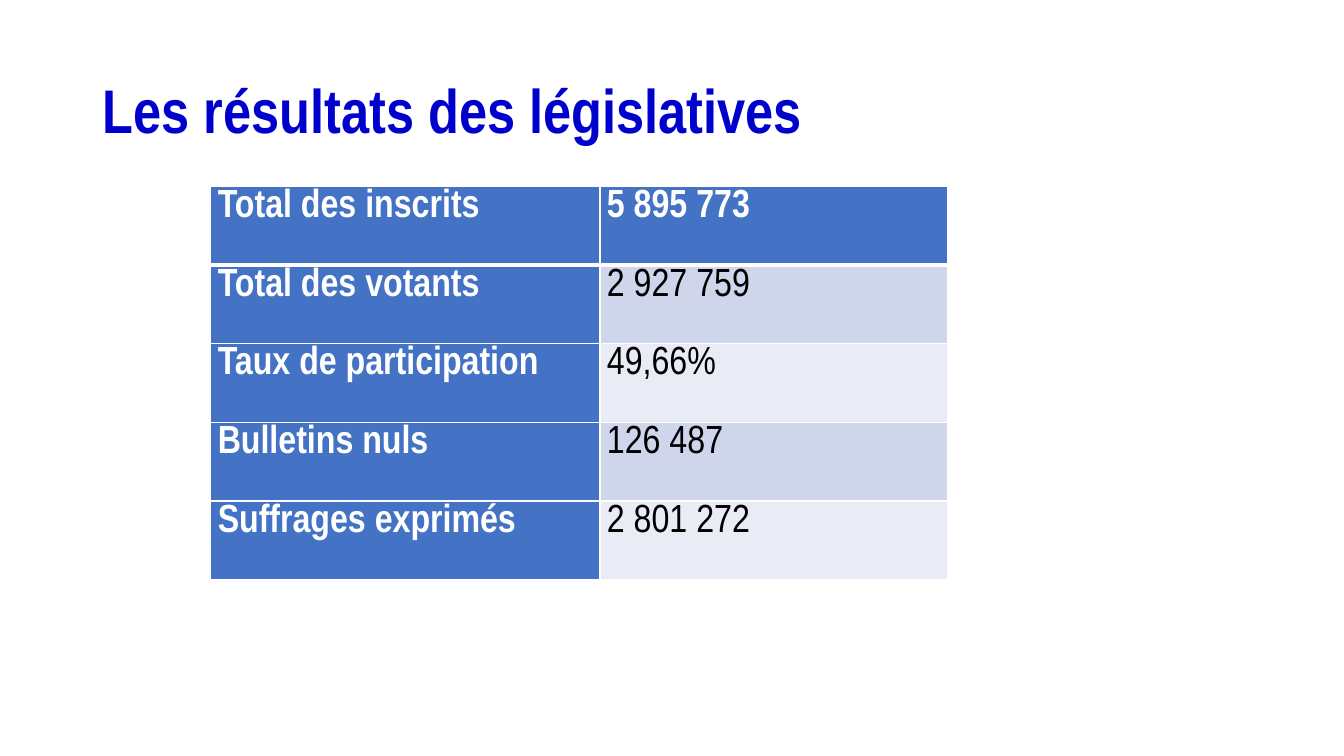
from typing import NamedTuple

from lxml.etree import SubElement
from pptx import Presentation
from pptx.dml.color import RGBColor
from pptx.enum.text import MSO_ANCHOR, MSO_AUTO_SIZE, PP_ALIGN
from pptx.oxml.ns import qn
from pptx.slide import Slide
from pptx.util import Emu, Pt

EMU_PER_PX = 9144
FONT = "Arial Narrow"
TITLE_BLUE = RGBColor(0x00, 0x00, 0xCC)
HEADER_BLUE = RGBColor(0x44, 0x72, 0xC4)
BAND_DARK = RGBColor(0xCF, 0xD5, 0xEA)
BAND_LIGHT = RGBColor(0xE9, 0xEB, 0xF5)
WHITE = RGBColor(0xFF, 0xFF, 0xFF)
BLACK = RGBColor(0x00, 0x00, 0x00)
COLUMN_WIDTHS = (386, 345)
ROW_HEIGHT = 78


class Result(NamedTuple):
    label: str
    value: str


RESULTS = (
    Result("Total des inscrits", "5 895 773"),
    Result("Total des votants", "2 927 759"),
    Result("Taux de participation", "49,66%"),
    Result("Bulletins nuls", "126 487"),
    Result("Suffrages exprimés", "2 801 272"),
)


def px(length: int) -> Emu:
    return Emu(length * EMU_PER_PX)


def add_run(paragraph, text: str, size: int, color: RGBColor, bold: bool) -> None:
    run = paragraph.add_run()
    run.text = text
    run.font.name = FONT
    run.font.size = Pt(size)
    run.font.bold = bold
    run.font.color.rgb = color


def add_border(cell, side: str, width: int) -> None:
    line = SubElement(cell._tc.get_or_add_tcPr(), qn(f"a:ln{side}"), w=str(Pt(width)))
    SubElement(SubElement(line, qn("a:solidFill")), qn("a:srgbClr"), val=str(WHITE))


def draw_title(slide: Slide, text: str) -> None:
    title = slide.shapes.title
    title.left, title.top, title.width, title.height = px(92), px(40), px(1150), px(145)
    frame = title.text_frame
    frame.word_wrap = True
    frame.auto_size = MSO_AUTO_SIZE.NONE
    frame.vertical_anchor = MSO_ANCHOR.MIDDLE
    paragraph = frame.paragraphs[0]
    paragraph.alignment = PP_ALIGN.LEFT
    paragraph.line_spacing = 0.9
    add_run(paragraph, text, 44, TITLE_BLUE, True)


def draw_cell(cell, text: str, row: int, column: int) -> None:
    # Borders come before the fill in the cell properties
    for side in "LRTB":
        under_header = (side == "B" and row == 0) or (side == "T" and row == 1)
        add_border(cell, side, 3 if under_header else 1)
    is_header = row == 0 or column == 0
    cell.fill.solid()
    cell.fill.fore_color.rgb = HEADER_BLUE if is_header else BAND_DARK if row % 2 else BAND_LIGHT

    cell.margin_left = cell.margin_right = px(7)
    cell.margin_top = cell.margin_bottom = 0
    paragraph = cell.text_frame.paragraphs[0]
    paragraph.alignment = PP_ALIGN.JUSTIFY
    paragraph.line_spacing = 1.07
    paragraph.space_after = Pt(8)
    add_run(paragraph, text, 28, WHITE if is_header else BLACK, is_header)


def draw_results(slide: Slide, results: tuple[Result, ...]) -> None:
    table = slide.shapes.add_table(
        len(results), len(COLUMN_WIDTHS), px(209), px(185),
        px(sum(COLUMN_WIDTHS)), px(ROW_HEIGHT * len(results)),
    ).table
    table.first_col = True
    for column, width in zip(table.columns, COLUMN_WIDTHS):
        column.width = px(width)
    for row, result in enumerate(results):
        table.rows[row].height = px(ROW_HEIGHT)
        for column, text in enumerate(result):
            draw_cell(table.cell(row, column), text, row, column)


def main() -> None:
    presentation = Presentation()
    presentation.slide_width, presentation.slide_height = px(1333), px(750)
    slide = presentation.slides.add_slide(presentation.slide_layouts[5])
    draw_title(slide, "Les résultats des législatives")
    draw_results(slide, RESULTS)
    presentation.save("out.pptx")


if __name__ == "__main__":
    main()
